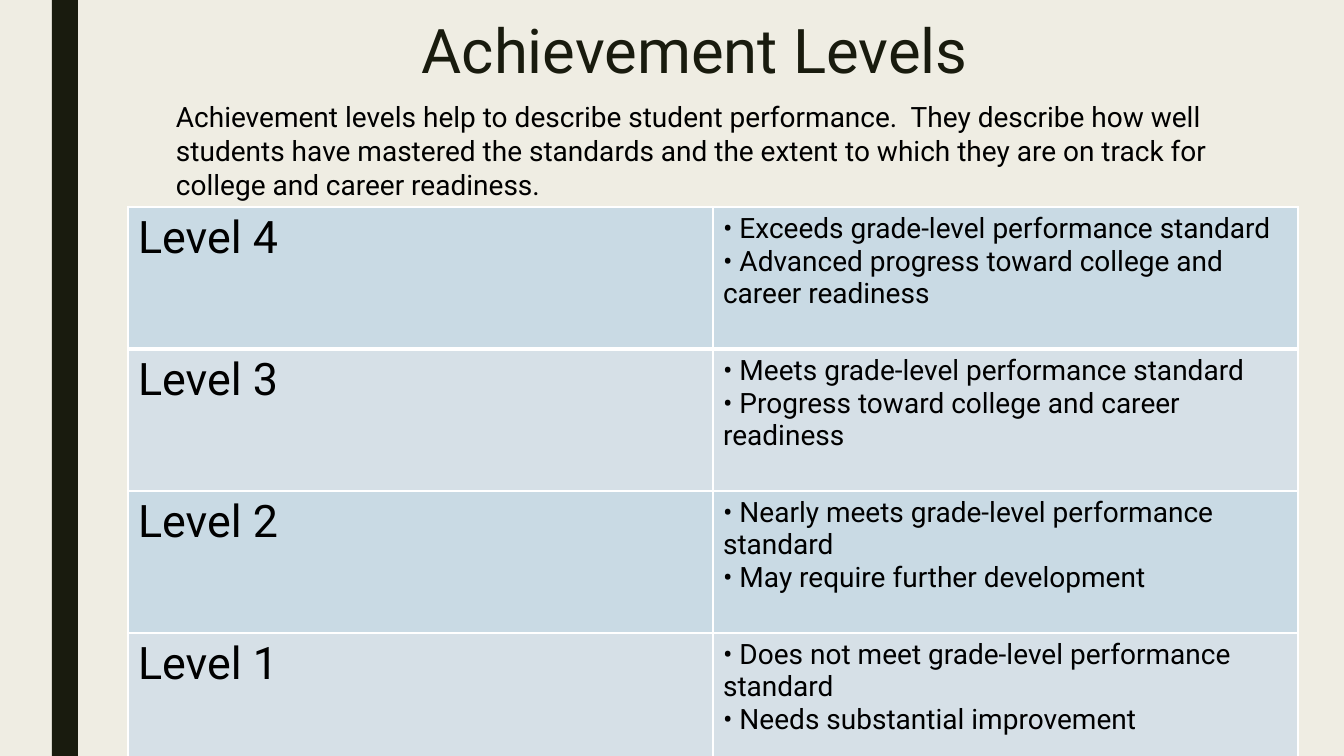
"""Builds the Achievement Levels slide."""
import pptx
import pptx.util
import pptx.dml.color
import pptx.enum.shapes
import pptx.enum.text
import pptx.oxml

TITLE = "Achievement Levels"
INTRO = (
    "Achievement levels help to describe student performance.  They describe "
    "how well students have mastered the standards and the extent to which "
    "they are on track for college and career readiness."
)
LEVELS = [
    ("Level 4", ["Exceeds grade-level performance standard",
                 "Advanced progress toward college and career readiness"]),
    ("Level 3", ["Meets grade-level performance standard",
                 "Progress toward college and career readiness"]),
    ("Level 2", ["Nearly meets grade-level performance standard",
                 "May require further development"]),
    ("Level 1", ["Does not meet grade-level performance standard",
                 "Needs substantial improvement"]),
]
PAPER, INK, BLACK, WHITE = "EFEDE3", "191B0E", "000000", "FFFFFF"
BANDS = ["C9DAE4", "D6E0E7"]
FONT = "Roboto"
WIDE, HIGH = 1344, 756
BAR = (52, 0, 26, HIGH)
HEAD = (166, 12, 1058, 83)
LEAD = (166, 95, 1094, 112)
LEFT, TOP, COL, ROW = 128, 207, 585, 142


def px(num):
    return pptx.util.Emu(round(num * 914400 / 100.8))


def box(rect):
    return [px(num) for num in rect]


def color(code):
    return pptx.dml.color.RGBColor.from_string(code)


def paint(shape, code):
    shape.fill.solid()
    shape.fill.fore_color.rgb = color(code)


def style(frame, size, code):
    for para in frame.paragraphs:
        for run in para.runs:
            run.font.name = FONT
            run.font.size = pptx.util.Pt(size)
            run.font.bold = False
            run.font.color.rgb = color(code)


def border(cell, base):
    props = cell._tc.get_or_add_tcPr()
    widths = {"L": 1, "R": 1, "T": 1, "B": base}
    for spot, (side, width) in enumerate(widths.items()):
        line = pptx.oxml.parse_xml(
            '<a:ln%s xmlns:a="http://schemas.openxmlformats.org/drawingml/2006/main" '
            'w="%d"><a:solidFill><a:srgbClr val="%s"/></a:solidFill></a:ln%s>'
            % (side, pptx.util.Pt(width), WHITE, side))
        props.insert(spot, line)


def main():
    deck = pptx.Presentation()
    deck.slide_width, deck.slide_height = px(WIDE), px(HIGH)
    slide = deck.slides.add_slide(deck.slide_layouts[5])
    paint(slide.background, PAPER)

    bar = slide.shapes.add_shape(
        pptx.enum.shapes.MSO_SHAPE.RECTANGLE, *box(BAR))
    bar.shadow.inherit = False
    paint(bar, INK)
    bar.line.fill.background()

    title = slide.shapes.title
    title.left, title.top, title.width, title.height = box(HEAD)
    frame = title.text_frame
    frame.text = TITLE
    frame.auto_size = pptx.enum.text.MSO_AUTO_SIZE.NONE
    frame.vertical_anchor = pptx.enum.text.MSO_ANCHOR.MIDDLE
    frame.paragraphs[0].alignment = pptx.enum.text.PP_ALIGN.CENTER
    frame.paragraphs[0].line_spacing = 0.89
    style(frame, 44, INK)

    table = slide.shapes.add_table(
        len(LEVELS), 2, *box((LEFT, TOP, 2 * COL, len(LEVELS) * ROW))).table
    table.first_row = table.horz_banding = False
    for col in table.columns:
        col.width = px(COL)
    for row, (level, points) in enumerate(LEVELS):
        table.rows[row].height = px(ROW)
        notes = "\n".join("• " + point for point in points)
        for col, (text, size) in enumerate([(level, 32), (notes, 20)]):
            cell = table.cell(row, col)
            cell.text_frame.text = text
            style(cell.text_frame, size, BLACK)
            paint(cell, BANDS[row % 2])
            border(cell, 3 if row == 0 else 1)

    lead = slide.shapes.add_textbox(*box(LEAD)).text_frame
    lead.word_wrap = True
    lead.text = INTRO
    style(lead, 20, BLACK)

    deck.save("out.pptx")


if __name__ == "__main__":
    main()
